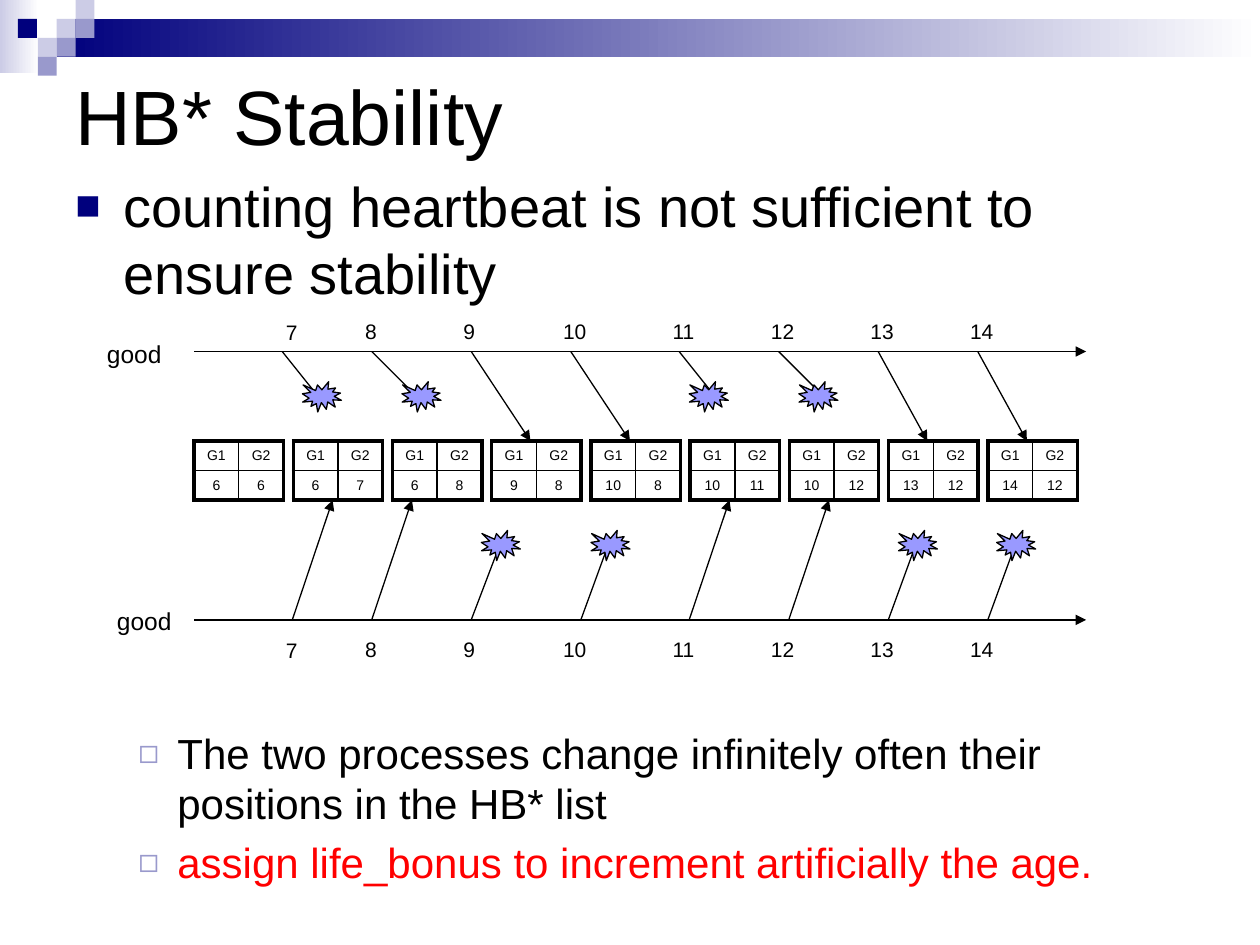
import pptx
import pptx.util
import pptx.dml.color
import pptx.enum.shapes
import pptx.enum.text
import pptx.oxml.ns
import lxml.etree

Inches = pptx.util.Inches
Pt = pptx.util.Pt
SHAPES = pptx.enum.shapes.MSO_SHAPE
ANCHOR = pptx.enum.text.MSO_ANCHOR
FIT = pptx.enum.text.MSO_AUTO_SIZE

COLORS = {
    "text": "000000", "navy": "00007D", "lilac": "9999CC", "pale": "CCCCE6",
    "white": "FFFFFF", "burst": "9999FF", "accent": "FF0000",
}


def rgb(name):
    return pptx.dml.color.RGBColor.from_string(COLORS[name])


def add_xml(parent, tag, **attributes):
    return lxml.etree.SubElement(parent, pptx.oxml.ns.qn(tag), attributes)


def apply(target, values):
    for name, value in values.items():
        setattr(target, name, value)


class SlideBuilder:
    """Holds the current slide and the style its elements share."""

    font = "Arial"
    line_width = 0.75
    thick, thin = 2.25, 1

    def __init__(self, slide):
        self.slide = slide

    def style_run(self, run, size, color="text"):
        apply(run.font, {"name": self.font, "size": Pt(size)})
        run.font.color.rgb = rgb(color)

    def shape(self, kind, box, fill, fade_to=None, outline=None):
        shape = self.slide.shapes.add_shape(kind, *map(Inches, box))
        shape.shadow.inherit = False
        if fade_to:
            shape.fill.gradient()
            shape.fill.gradient_angle = 0
            for stop, color in zip(shape.fill.gradient_stops, (fill, fade_to)):
                stop.color.rgb = rgb(color)
        else:
            shape.fill.solid()
            shape.fill.fore_color.rgb = rgb(fill)
        if outline:
            shape.line.color.rgb = rgb(outline)
            shape.line.width = Pt(self.line_width)
        else:
            shape.line.fill.background()

    def burst(self, left, top):
        self.shape(SHAPES.EXPLOSION1, (left, top, 0.31, 0.24), "burst", outline="text")

    def arrow(self, start, end):
        arrow = self.slide.shapes.add_connector(
            pptx.enum.shapes.MSO_CONNECTOR.STRAIGHT, *map(Inches, start + end))
        arrow.line.color.rgb = rgb("text")
        arrow.line.width = Pt(self.line_width)
        add_xml(arrow.line._get_or_add_ln(), "a:tailEnd", type="triangle")
        add_xml(arrow._element.spPr, "a:effectLst")

    def text_frame(self, box, **frame_format):
        frame = self.slide.shapes.add_textbox(*map(Inches, box)).text_frame
        apply(frame, {"word_wrap": True, **frame_format})
        return frame

    def text(self, wording, box, size, **frame_format):
        frame = self.text_frame(box, **frame_format)
        self.style_run(frame.paragraphs[0].add_run(), size)
        frame.paragraphs[0].runs[0].text = wording

    def label(self, wording, box, size):
        self.text(wording, box, size, word_wrap=False, auto_size=FIT.SHAPE_TO_FIT_TEXT)

    def bullet(self, paragraph, wording, size, level, space_before, color="text"):
        mark, mark_color, mark_size, margin, hanging = (
            ("■", "navy", 75, 0.38, 0.38), ("◻", "lilac", 80, 0.81, 0.31))[level]
        apply(paragraph, {"level": level, "space_before": Pt(space_before)})
        run = paragraph.add_run()
        run.text = wording
        self.style_run(run, size, color)
        properties = paragraph._p.get_or_add_pPr()
        properties.set("marL", str(Inches(margin)))
        properties.set("indent", str(-Inches(hanging)))
        add_xml(add_xml(properties, "a:buClr"), "a:srgbClr", val=COLORS[mark_color])
        add_xml(properties, "a:buSzPct", val=str(mark_size * 1000))
        add_xml(properties, "a:buFont", typeface=self.font)
        add_xml(properties, "a:buChar", char=mark)

    def border(self, cell, side, width):
        line = add_xml(cell._tc.get_or_add_tcPr(), f"a:ln{side}", w=str(Pt(width)))
        add_xml(add_xml(line, "a:solidFill"), "a:srgbClr", val=COLORS["text"])

    def table(self, rows, box):
        """Draws a grid with a thick frame and thin inner lines."""
        last_row, last_column = len(rows) - 1, len(rows[0]) - 1
        table = self.slide.shapes.add_table(
            len(rows), len(rows[0]), *map(Inches, box)).table
        apply(table, {"first_row": False, "horz_banding": False})
        for r, row in enumerate(rows):
            for c, value in enumerate(row):
                cell = table.cell(r, c)
                cell.vertical_anchor = ANCHOR.MIDDLE
                on_frame = {"L": c == 0, "R": c == last_column,
                            "T": r == 0, "B": r == last_row}
                for side, outer in on_frame.items():
                    self.border(cell, side, self.thick if outer else self.thin)
                cell.fill.background()
                paragraph = cell.text_frame.paragraphs[0]
                paragraph.alignment = pptx.enum.text.PP_ALIGN.CENTER
                run = paragraph.add_run()
                run.text = str(value)
                self.style_run(run, 8)


def draw_header(builder):
    builder.shape(SHAPES.RECTANGLE, (0, 0, 0.31, 0.58), "pale", fade_to="white")
    builder.shape(SHAPES.RECTANGLE, (0.45, 0.15, 9.55, 0.3), "navy", fade_to="white")
    side = 0.15
    for column, row, color in (
            (3, 1, "pale"), (4, 0, "pale"), (4, 1, "lilac"), (2, 2, "pale"),
            (0.95, 1, "navy"), (3, 2, "lilac"), (2, 3, "lilac")):
        builder.shape(SHAPES.RECTANGLE, (column * side, row * side, side, side), color)


def draw_content(builder):
    builder.text("HB* Stability", (0.5, 0.16, 9, 1.5), 44, vertical_anchor=ANCHOR.MIDDLE)
    frame = builder.text_frame((0.5, 1.31, 8.44, 1.73))
    builder.bullet(frame.paragraphs[0],
                   "counting heartbeat is not sufficient to ensure stability", 32, 0, 6.4)
    # The large space leaves room for the timeline diagram.
    for wording, space, color in (
            ("The two processes change infinitely often their positions in the HB* list",
             241, "text"),
            ("assign life_bonus to increment artificially the age.", 4.8, "accent")):
        builder.bullet(frame.add_paragraph(), wording, 24, 1, space, color)


def draw_timeline(builder, axis, process_box, label_top, burst_top, heartbeats):
    """Each heartbeat gives start x, end x, end y and the burst's left if it is lost."""
    builder.arrow((1.54, axis), (8.62, axis))
    builder.label("good", process_box, 14)
    label_lefts = (2.17, 2.8, 3.58, 4.37, 5.24, 6.02, 6.81, 7.6)
    for count, (left, beat) in enumerate(zip(label_lefts, heartbeats), 7):
        start, end, end_y, burst_left = beat
        builder.arrow((start, axis), (end, end_y))
        if burst_left:
            builder.burst(burst_left, burst_top)
        top = label_top + (0.01 if count == 7 else 0)
        builder.label(str(count), (left, top, 0.31 if count < 10 else 0.39, 0.3), 12)


def main():
    deck = pptx.Presentation()
    apply(deck, {"slide_width": Inches(10), "slide_height": Inches(7.5)})
    builder = SlideBuilder(deck.slides.add_slide(deck.slide_layouts[6]))
    draw_header(builder)
    draw_content(builder)

    counters = ((6, 6), (6, 7), (6, 8), (9, 8), (10, 8),
                (10, 11), (10, 12), (13, 12), (14, 12))
    for i, counts in enumerate(counters):
        builder.table((("G1", "G2"), counts), (1.54 + i * 0.7875, 3.5, 0.71, 0.46))

    draw_timeline(builder, 2.79, (0.75, 2.64, 0.71, 0.33), 2.48, 3.03, (
        (2.24, 2.56, 3.19, 2.4), (2.95, 3.35, 3.19, 3.19),
        (3.74, 4.21, 3.5, None), (4.53, 5, 3.5, None),
        (5.39, 5.71, 3.19, 5.47), (6.18, 6.58, 3.19, 6.34),
        (6.97, 7.36, 3.5, None), (7.76, 8.15, 3.5, None)))
    draw_timeline(builder, 4.92, (0.83, 4.76, 0.71, 0.33), 5, 4.21, (
        (2.32, 2.64, 3.97, None), (2.95, 3.27, 3.97, None),
        (3.74, 3.98, 4.29, 3.82), (4.61, 4.84, 4.29, 4.69),
        (5.47, 5.79, 3.97, None), (6.26, 6.58, 3.97, None),
        (7.05, 7.28, 4.29, 7.13), (7.84, 8.07, 4.29, 7.91)))
    deck.save("out.pptx")


if __name__ == "__main__":
    main()
